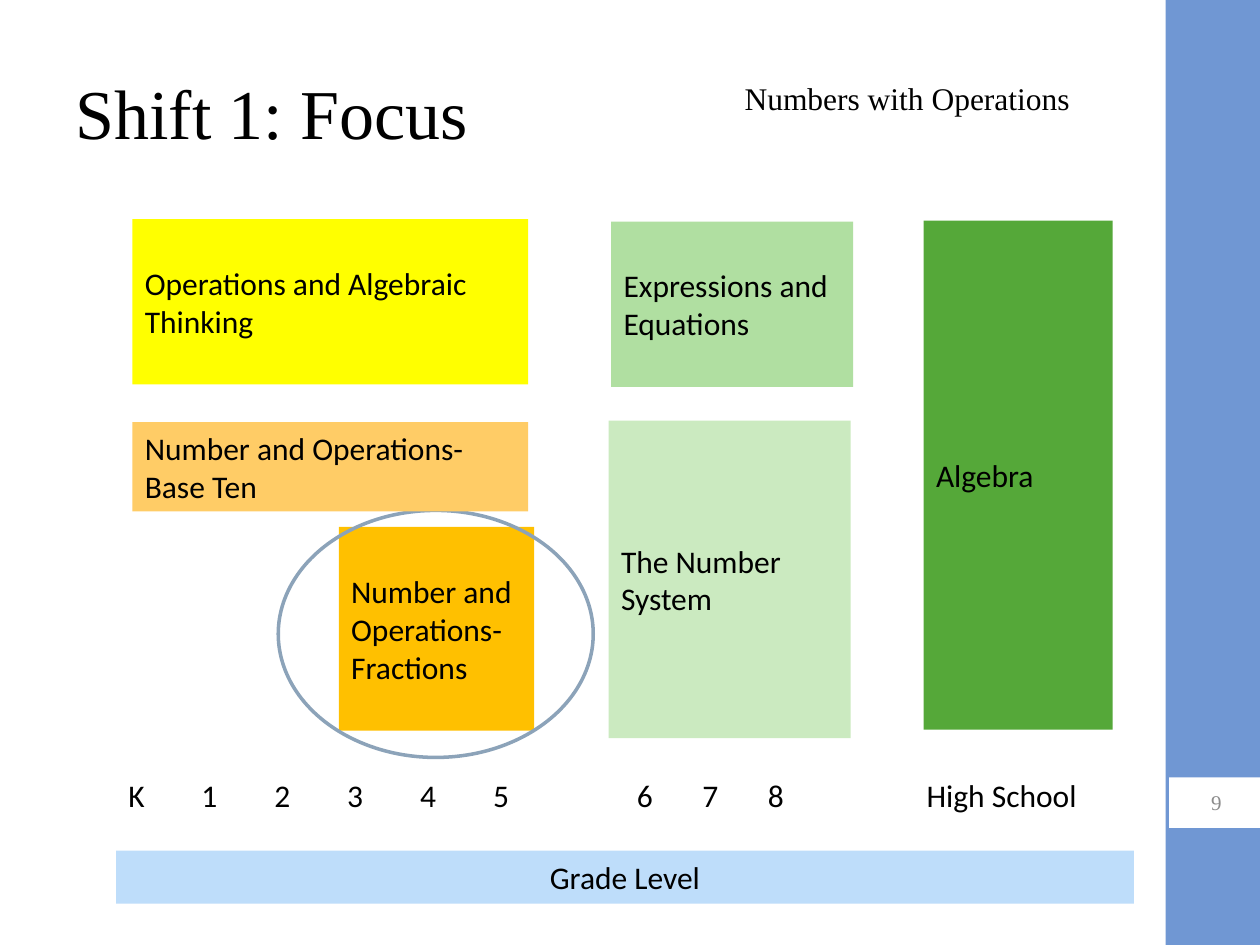
from dataclasses import dataclass

from lxml.etree import SubElement
from pptx import Presentation
from pptx.dml.color import RGBColor
from pptx.enum.shapes import MSO_SHAPE
from pptx.enum.text import MSO_ANCHOR, MSO_AUTO_SIZE, PP_ALIGN
from pptx.oxml.ns import qn
from pptx.util import Cm, Pt


@dataclass(frozen=True)
class Theme:
    sans: str = "Calibri"
    serif: str = "Times New Roman"
    title: int = 40
    body: int = 18
    small: int = 12
    ink: str = "000000"
    gray: str = "8C8C8C"
    white: str = "FFFFFF"
    side: str = "7097D3"
    ring: str = "8CA3B9"
    yellow: str = "FFFF00"
    gold: str = "FFC000"
    peach: str = "FFCC66"
    green: str = "B0DFA1"
    pale: str = "CBEAC0"
    deep: str = "55A839"
    sky: str = "BEDDFA"


THEME = Theme()

LOWER = [
    ("Operations and Algebraic Thinking", THEME.yellow, (2.67, 4.42, 7.98, 3.33)),
    ("Number and Operations- Fractions", THEME.gold, (6.83, 10.62, 3.94, 4.11)),
]
UPPER = [
    ("Number and Operations-\nBase Ten", THEME.peach, (2.67, 8.51, 7.98, 1.8)),
    ("Expressions and Equations", THEME.green, (12.32, 4.47, 4.88, 3.33)),
    ("The Number System", THEME.pale, (12.27, 8.48, 4.88, 6.4)),
    ("Algebra", THEME.deep, (18.62, 4.45, 3.81, 10.26)),
]
GRADES = ["K", "1", "2", "3", "4", "5", "6", "7", "8", "High School"]
STOPS = [1.47 * n for n in range(1, 6)] + [10.25 + 1.32 * n for n in range(3)] + [16.09]


def write(frame, text, size=THEME.body, face=THEME.sans, color=THEME.ink,
          align=PP_ALIGN.LEFT, anchor=MSO_ANCHOR.MIDDLE):
    frame.word_wrap = True
    frame.auto_size = MSO_AUTO_SIZE.NONE
    frame.vertical_anchor = anchor
    for n, line in enumerate(text.split("\n")):
        para = frame.add_paragraph() if n else frame.paragraphs[0]
        para.alignment = align
        run = para.add_run()
        run.text = line
        run.font.size = Pt(size)
        run.font.name = face
        run.font.color.rgb = RGBColor.from_string(color)


def add_box(slide, spot, fill, text="", **style):
    box = slide.shapes.add_shape(MSO_SHAPE.RECTANGLE, *map(Cm, spot))
    box.shadow.inherit = False
    box.fill.solid()
    box.fill.fore_color.rgb = RGBColor.from_string(fill)
    box.line.fill.background()
    if text:
        write(box.text_frame, text, **style)


def add_ring(slide, spot):
    ring = slide.shapes.add_shape(MSO_SHAPE.OVAL, *map(Cm, spot))
    ring.shadow.inherit = False
    ring.fill.background()
    ring.line.color.rgb = RGBColor.from_string(THEME.ring)
    ring.line.width = Pt(2)


def add_label(slide, spot, text, stops=(), **style):
    frame = slide.shapes.add_textbox(*map(Cm, spot)).text_frame
    if stops:
        tabs = SubElement(frame.paragraphs[0]._p.get_or_add_pPr(), qn("a:tabLst"))
        for stop in stops:
            SubElement(tabs, qn("a:tab"), pos=str(Cm(stop)), algn="l")
    write(frame, text, anchor=MSO_ANCHOR.TOP, **style)


def set_title(slide, spot, text):
    title = slide.shapes.title
    title.left, title.top, title.width, title.height = map(Cm, spot)
    write(title.text_frame, text, size=THEME.title, face=THEME.serif,
          anchor=MSO_ANCHOR.TOP)


def main():
    deck = Presentation()
    deck.slide_width, deck.slide_height = Cm(25.4), Cm(19.05)
    slide = deck.slides.add_slide(deck.slide_layouts[5])
    add_box(slide, (23.5, 0, 1.9, 19.05), THEME.side)
    add_box(slide, (23.57, 15.67, 1.9, 1.02), THEME.white, "9", size=THEME.small,
            face=THEME.serif, color=THEME.gray, align=PP_ALIGN.CENTER)
    set_title(slide, (1.27, 1.27, 15.04, 1.96), "Shift 1: Focus")
    for text, fill, spot in LOWER:
        add_box(slide, spot, fill, text)
    add_ring(slide, (5.61, 10.29, 6.35, 4.98))
    for text, fill, spot in UPPER:
        add_box(slide, spot, fill, text)
    add_label(slide, (2.34, 15.52, 20.52, 1.02), "\t".join(GRADES), STOPS)
    add_label(slide, (14.76, 1.47, 8.1, 1.02), "Numbers with Operations",
              face=THEME.serif)
    add_box(slide, (2.34, 17.15, 20.52, 1.07), THEME.sky, "Grade Level",
            align=PP_ALIGN.CENTER)
    deck.save("out.pptx")


if __name__ == "__main__":
    main()
